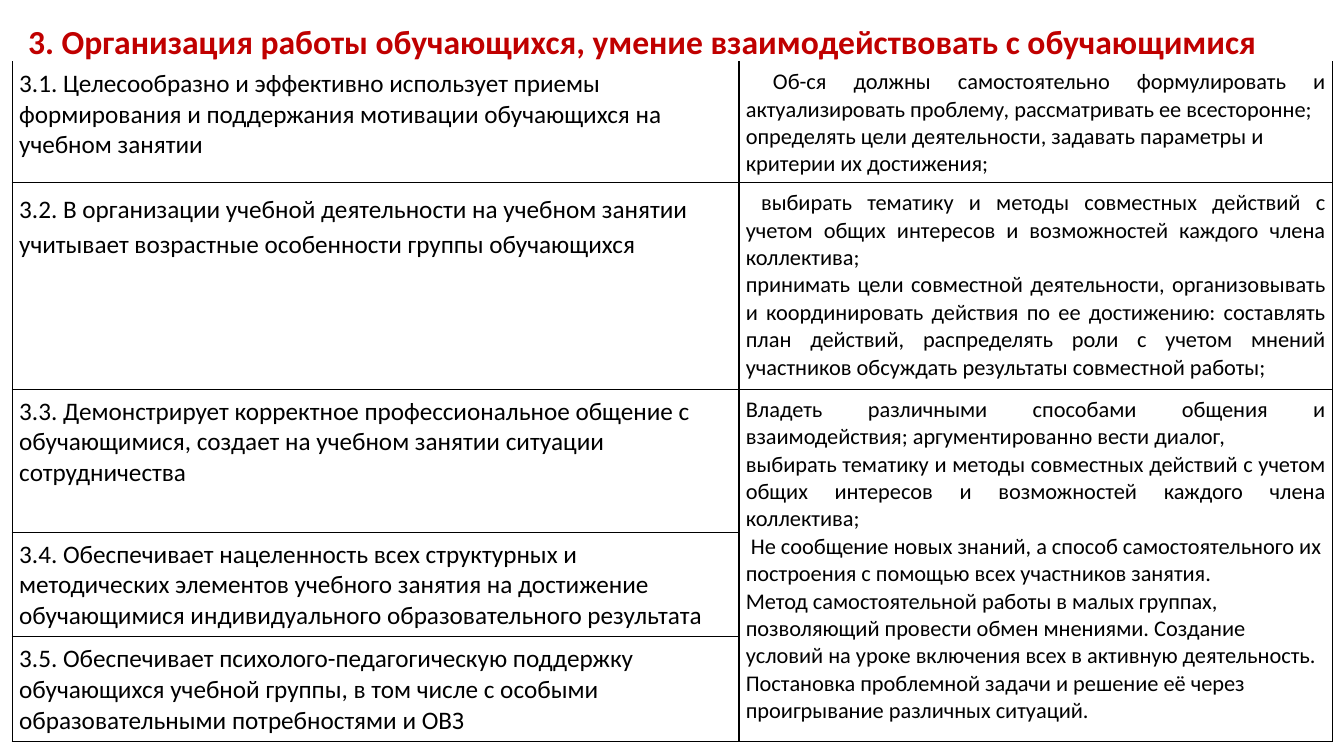
from lxml.etree import SubElement
from pptx import Presentation
from pptx.dml.color import RGBColor
from pptx.enum.text import MSO_ANCHOR, PP_ALIGN
from pptx.oxml.ns import qn
from pptx.util import Pt

# Content
TITLE = "3. Организация работы обучающихся, умение взаимодействовать с обучающимися"

# Criteria: text, line spacing, space after
CRITERIA = [
    ("3.1. Целесообразно и эффективно использует приемы формирования и поддержания "
     "мотивации обучающихся на учебном занятии", 1.0, 10),
    ("3.2. В организации учебной деятельности на учебном занятии учитывает возрастные "
     "особенности группы обучающихся", 1.15, 10),
    ("3.3. Демонстрирует корректное профессиональное общение с обучающимися, создает "
     "на учебном занятии ситуации сотрудничества", 1.0, 0),
    ("3.4. Обеспечивает нацеленность всех структурных и методических элементов учебного "
     "занятия на достижение обучающимися индивидуального образовательного результата", 1.0, 10),
    ("3.5. Обеспечивает психолого-педагогическую поддержку обучающихся учебной группы, "
     "в том числе с особыми образовательными потребностями и ОВЗ", 1.0, 10),
]

# Skills beside the criteria: text, alignment
JUSTIFY, LEFT = PP_ALIGN.JUSTIFY, PP_ALIGN.LEFT
SKILLS = [
    [(" Об-ся должны самостоятельно формулировать и актуализировать проблему, "
      "рассматривать ее всесторонне;", JUSTIFY),
     ("определять цели деятельности, задавать параметры и критерии их достижения;", LEFT)],
    [(" выбирать тематику и методы совместных действий с учетом общих интересов и "
      "возможностей каждого члена коллектива;", JUSTIFY),
     ("принимать цели совместной деятельности, организовывать и координировать действия "
      "по ее достижению: составлять план действий, распределять роли с учетом мнений "
      "участников обсуждать результаты совместной работы;", JUSTIFY)],
    [("Владеть различными способами общения и взаимодействия; аргументированно вести "
      "диалог,", JUSTIFY),
     ("выбирать тематику и методы совместных действий с учетом общих интересов и "
      "возможностей каждого члена коллектива;", JUSTIFY),
     (" Не сообщение новых знаний, а способ самостоятельного их построения с помощью "
      "всех участников занятия.", LEFT),
     ("Метод самостоятельной работы в малых группах, позволяющий провести обмен мнениями. "
      "Создание условий на уроке включения всех в активную деятельность.", LEFT),
     ("Постановка проблемной задачи и решение её через проигрывание различных ситуаций.",
      LEFT)],
]

# Layout and style
COLUMN_WIDTHS = [519.1, 424.1]
ROW_HEIGHTS = [83.5, 147.6, 102.2, 72, 74.9]
CELL_MARGIN = Pt(4.9)
FONT = "Calibri"
RED = RGBColor(0xC0, 0x00, 0x00)
BLACK = RGBColor(0x00, 0x00, 0x00)


def style_font(font, size, color=BLACK, bold=False):
    font.name, font.size, font.bold = FONT, Pt(size), bold
    font.color.rgb = color


def fill_cell(cell, paragraphs, size):
    """Write (text, alignment, line spacing, space after) paragraphs."""
    frame = cell.text_frame
    for number, (text, alignment, spacing, after) in enumerate(paragraphs):
        para = frame.add_paragraph() if number else frame.paragraphs[0]
        para.text = text
        para.alignment = alignment
        para.line_spacing = spacing
        para.space_after = Pt(after)
        style_font(para.font, size)


def set_borders(cell, has_top):
    properties = cell._tc.get_or_add_tcPr()
    for side in "LRTB":
        line = SubElement(properties, qn(f"a:ln{side}"), w=str(Pt(1)))
        if side == "T" and not has_top:
            SubElement(line, qn("a:noFill"))
        else:
            solid = SubElement(line, qn("a:solidFill"))
            SubElement(solid, qn("a:srgbClr"), val=str(BLACK))


deck = Presentation()
deck.slide_width, deck.slide_height = Pt(960), Pt(540)
page = deck.slides.add_slide(deck.slide_layouts[6])

# Title
title_box = page.shapes.add_textbox(Pt(13), Pt(13), Pt(938), Pt(36.7))
title_frame = title_box.text_frame
title_frame.word_wrap = True
title_frame.vertical_anchor = MSO_ANCHOR.MIDDLE
title_para = title_frame.paragraphs[0]
title_para.text = TITLE
title_para.line_spacing = 0.9
style_font(title_para.font, 24, RED, bold=True)

# Table frame
table = page.shapes.add_table(
    len(ROW_HEIGHTS), len(COLUMN_WIDTHS), Pt(8.8), Pt(43.9),
    Pt(sum(COLUMN_WIDTHS)), Pt(sum(ROW_HEIGHTS))).table
table.first_row = table.horz_banding = False
for column, width in zip(table.columns, COLUMN_WIDTHS):
    column.width = Pt(width)
for row_number, (row, height) in enumerate(zip(table.rows, ROW_HEIGHTS)):
    row.height = Pt(height)
    for cell in row.cells:
        cell.margin_left = cell.margin_right = CELL_MARGIN
        cell.margin_top = cell.margin_bottom = CELL_MARGIN
        set_borders(cell, has_top=row_number > 0)
        cell.fill.background()

# Table text
table.cell(2, 1).merge(table.cell(4, 1))
for row_number, (text, spacing, after) in enumerate(CRITERIA):
    fill_cell(table.cell(row_number, 0), [(text, LEFT, spacing, after)], 18)
for row_number, skills in enumerate(SKILLS):
    fill_cell(table.cell(row_number, 1), [(*skill, 1.0, 0) for skill in skills], 16)

deck.save("out.pptx")
